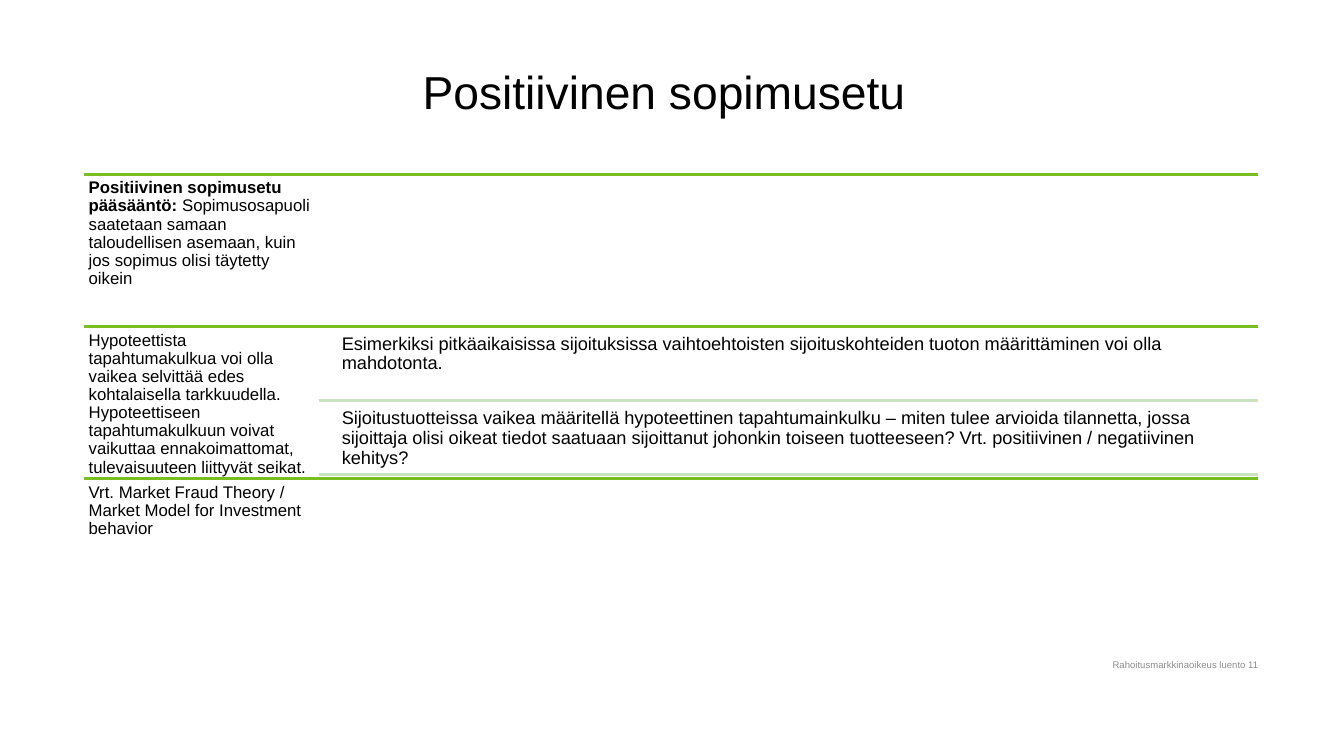
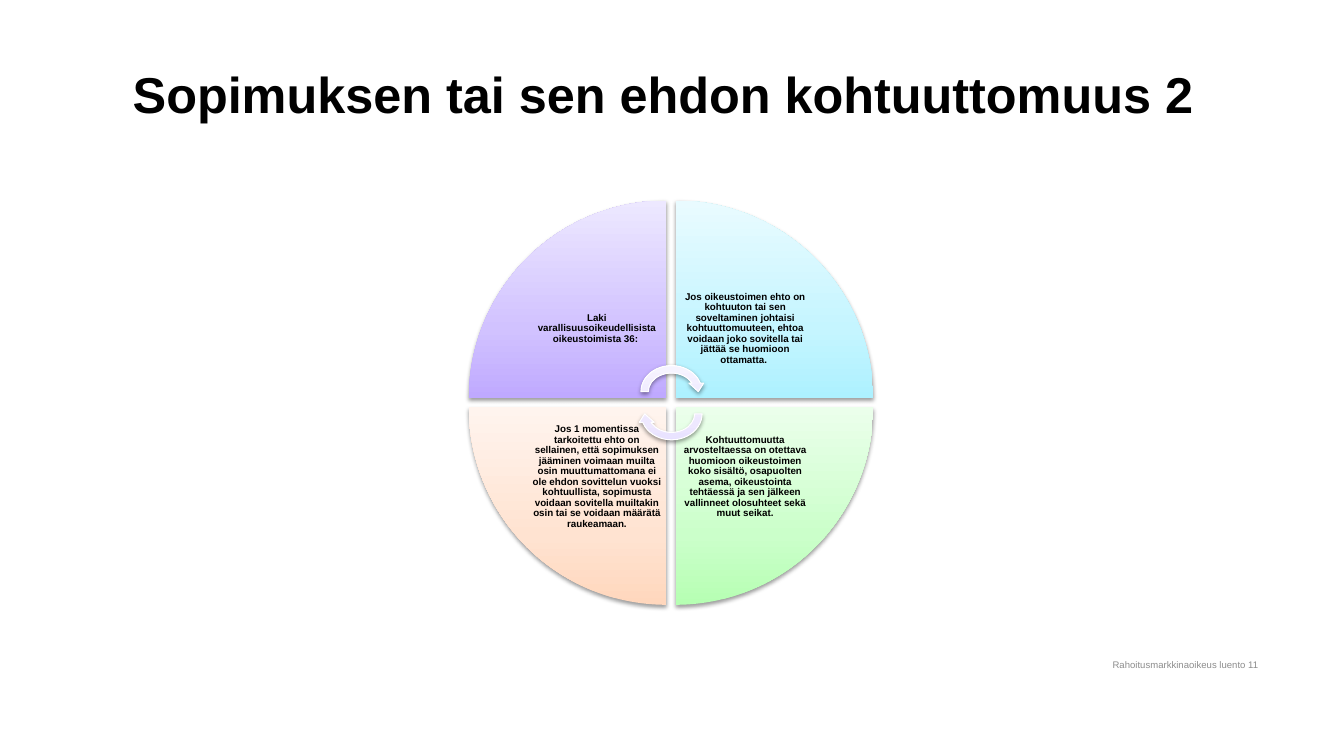
from lxml.etree import SubElement
from pptx import Presentation
from pptx.dml.color import RGBColor
from pptx.enum.shapes import MSO_CONNECTOR, MSO_SHAPE
from pptx.enum.text import MSO_ANCHOR, MSO_AUTO_SIZE, PP_ALIGN
from pptx.oxml import parse_xml
from pptx.oxml.ns import nsdecls, qn
from pptx.util import Inches, Pt

BLACK, GREY, WHITE = "000000", "8C8C8C", "FFFFFF"
GREEN, PALE_GREEN = "78BE20", "CAE2BD"
LEFT, RIGHT = 0.83, 12.48
FOOTER = "Rahoitusmarkkinaoikeus luento 11"


def write(shape, *spans, size=12, color=BLACK, bold=False, align=PP_ALIGN.LEFT,
          anchor=MSO_ANCHOR.TOP, spacing=0.9, insets=(0.05, 0.05, 0.05, 0.05)):
    """Fill a shape with one paragraph; bold applies to the first span only."""
    frame = shape.text_frame
    frame.word_wrap = True
    frame.auto_size = MSO_AUTO_SIZE.NONE
    frame.vertical_anchor = anchor
    (frame.margin_left, frame.margin_top,
     frame.margin_right, frame.margin_bottom) = [Inches(inset) for inset in insets]
    para = frame.paragraphs[0]
    para.alignment, para.line_spacing = align, spacing
    for index, text in enumerate(spans):
        span = para.add_run()
        span.text = text
        span.font.name, span.font.size = "Arial", Pt(size)
        span.font.bold = bold and index == 0
        span.font.color.rgb = RGBColor.from_string(color)


def add_soft_shape(page, kind, left, top, width, height, rotation, shades):
    """Add a shape with an upright gradient, dark at the bottom, and a soft shadow."""
    shape = page.shapes.add_shape(kind, Inches(left), Inches(top), Inches(width), Inches(height))
    shape.rotation = rotation
    shape.line.fill.background()
    shape.fill.background()
    stops = "".join(
        f'<a:gs pos="{position * 1000}"><a:srgbClr val="{shade}"/></a:gs>'
        for position, shade in zip((0, 35, 100), shades))
    properties = shape._element.spPr
    properties.replace(properties.find(qn("a:noFill")), parse_xml(
        f'<a:gradFill {nsdecls("a")} rotWithShape="0"><a:gsLst>{stops}</a:gsLst>'
        '<a:lin ang="16200000" scaled="0"/></a:gradFill>'))
    shape.shadow.inherit = False
    properties.find(qn("a:effectLst")).append(parse_xml(
        f'<a:outerShdw {nsdecls("a")} blurRad="{Pt(3.1)}" dist="{Pt(1.6)}" dir="5400000" '
        'rotWithShape="0"><a:srgbClr val="000000"><a:alpha val="38000"/></a:srgbClr>'
        '</a:outerShdw>'))
    return shape


deck = Presentation()
deck.slide_width, deck.slide_height = Inches(13.33), Inches(7.5)
layout = deck.slide_layouts.get_by_name("Title Only")
layout_title = layout.placeholders[0]
layout_title.left, layout_title.top = Inches(LEFT), Inches(0.53)
layout_title.width, layout_title.height = Inches(11.64), Inches(1.18)

pages = []
for heading, size, bold in (("Positiivinen sopimusetu ", 33, False),
                            ("Sopimuksen tai sen ehdon kohtuuttomuus 2 ", 36, True)):
    page = deck.slides.add_slide(layout)
    write(page.shapes.title, heading, size=size, bold=bold, align=PP_ALIGN.CENTER,
          spacing=1, insets=(0.1, 0.1, 0.1, 0.05))
    footer = page.shapes.add_textbox(Inches(7.2), Inches(6.51), Inches(5.28), Inches(0.17))
    write(footer, FOOTER, size=6.8, color=GREY, align=PP_ALIGN.RIGHT,
          anchor=MSO_ANCHOR.MIDDLE, spacing=1, insets=(0.1, 0.05, 0, 0.05))
    pages.append(page)
rules_page, wheel_page = pages

# Slide 1: three ruled rows, the second with two details
ROW_TOP, ROW_HEIGHT, LABEL_WIDTH = 1.73, 1.51, 2.33
DETAIL_TOP, DETAIL_HEIGHT, DETAIL_STEP = 3.27, 0.7, 0.74
DETAIL_LEFT = 3.34
labels = [
    ("Positiivinen sopimusetu pääsääntö: ",
     "Sopimusosapuoli saatetaan samaan taloudellisen asemaan, kuin jos sopimus olisi "
     "täytetty oikein"),
    ("Hypoteettista tapahtumakulkua voi olla vaikea selvittää edes kohtalaisella "
     "tarkkuudella. Hypoteettiseen tapahtumakulkuun voivat vaikuttaa ennakoimattomat, "
     "tulevaisuuteen liittyvät seikat.",),
    ("Vrt. Market Fraud Theory / Market Model for Investment behavior",),
]
details = [
    "Esimerkiksi pitkäaikaisissa sijoituksissa vaihtoehtoisten sijoituskohteiden tuoton "
    "määrittäminen voi olla mahdotonta.",
    "Sijoitustuotteissa vaikea määritellä hypoteettinen tapahtumainkulku – miten tulee "
    "arvioida tilannetta, jossa sijoittaja olisi oikeat tiedot saatuaan sijoittanut johonkin "
    "toiseen tuotteeseen? Vrt. positiivinen / negatiivinen kehitys?",
]
rules = []
for row, spans in enumerate(labels):
    top = ROW_TOP + row * ROW_HEIGHT
    rules.append((LEFT, top, GREEN))
    box = rules_page.shapes.add_textbox(
        Inches(LEFT), Inches(top), Inches(LABEL_WIDTH), Inches(ROW_HEIGHT))
    write(box, *spans, bold=len(spans) > 1)
for row, text in enumerate(details):
    top = DETAIL_TOP + row * DETAIL_STEP
    rules.append((LEFT + LABEL_WIDTH, top + DETAIL_HEIGHT, PALE_GREEN))
    box = rules_page.shapes.add_textbox(
        Inches(DETAIL_LEFT), Inches(top), Inches(RIGHT - DETAIL_LEFT), Inches(DETAIL_HEIGHT))
    write(box, text, size=13)
for start, height, color in rules:
    rule = rules_page.shapes.add_connector(
        MSO_CONNECTOR.STRAIGHT, Inches(start), Inches(height), Inches(RIGHT), Inches(height))
    rule.line.color.rgb = RGBColor.from_string(color)
    rule.line.width = Pt(2)
    SubElement(rule._element.spPr, qn("a:effectLst"))

# Slide 2: four wedges, clockwise from the top left, around two arrows
WEDGE, TEXT_SIDE = 1.96, 1.38
INNER_LEFT, INNER_RIGHT, INNER_TOP, INNER_BOTTOM = 6.61, 6.7, 3.95, 4.04
wedges = [
    (True, True, ("BFA9FF", "D1C2FF", "EDE8FF"),
     "Laki varallisuusoikeudellisista oikeustoimista 36: "),
    (False, True, ("ADF1FF", "C5F5FF", "E9FBFF"),
     "Jos oikeustoimen ehto on kohtuuton tai sen soveltaminen johtaisi kohtuuttomuuteen, "
     "ehtoa voidaan joko sovitella tai jättää se huomioon ottamatta. "),
    (False, False, ("B6FFB3", "CBFFCA", "EBFFEB"),
     "Kohtuuttomuutta arvosteltaessa on otettava huomioon oikeustoimen koko sisältö, "
     "osapuolten asema, oikeustointa tehtäessä ja sen jälkeen vallinneet olosuhteet sekä "
     "muut seikat."),
    (True, False, ("FFD7BD", "FFE3D1", "FFF4EE"),
     "Jos 1 momentissa tarkoitettu ehto on sellainen, että sopimuksen jääminen voimaan muilta "
     "osin muuttumattomana ei ole ehdon sovittelun vuoksi kohtuullista, sopimusta voidaan "
     "sovitella muiltakin osin tai se voidaan määrätä raukeamaan."),
]
for quarter, (on_left, on_top, shades, text) in enumerate(wedges):
    (wedge_left, wedge_top), (text_left, text_top) = [
        (INNER_LEFT - side if on_left else INNER_RIGHT,
         INNER_TOP - side if on_top else INNER_BOTTOM) for side in (WEDGE, TEXT_SIDE)]
    add_soft_shape(wheel_page, MSO_SHAPE.PIE_WEDGE, wedge_left, wedge_top, WEDGE, WEDGE,
                   quarter * 90, shades)
    box = wheel_page.shapes.add_textbox(
        Inches(text_left), Inches(text_top), Inches(TEXT_SIDE), Inches(TEXT_SIDE))
    write(box, text, size=7, bold=True, align=PP_ALIGN.CENTER, anchor=MSO_ANCHOR.MIDDLE)

for top, rotation in ((3.59, 0), (3.81, 180)):
    arrow = add_soft_shape(wheel_page, MSO_SHAPE.CIRCULAR_ARROW, 6.32, top, 0.68, 0.59,
                           rotation, ("E7E0FF", "EEE8FF", "F8F6FF"))
    arrow.line.color.rgb = RGBColor.from_string(WHITE)
    arrow.line.width = Pt(0.75)

deck.save("out.pptx")
